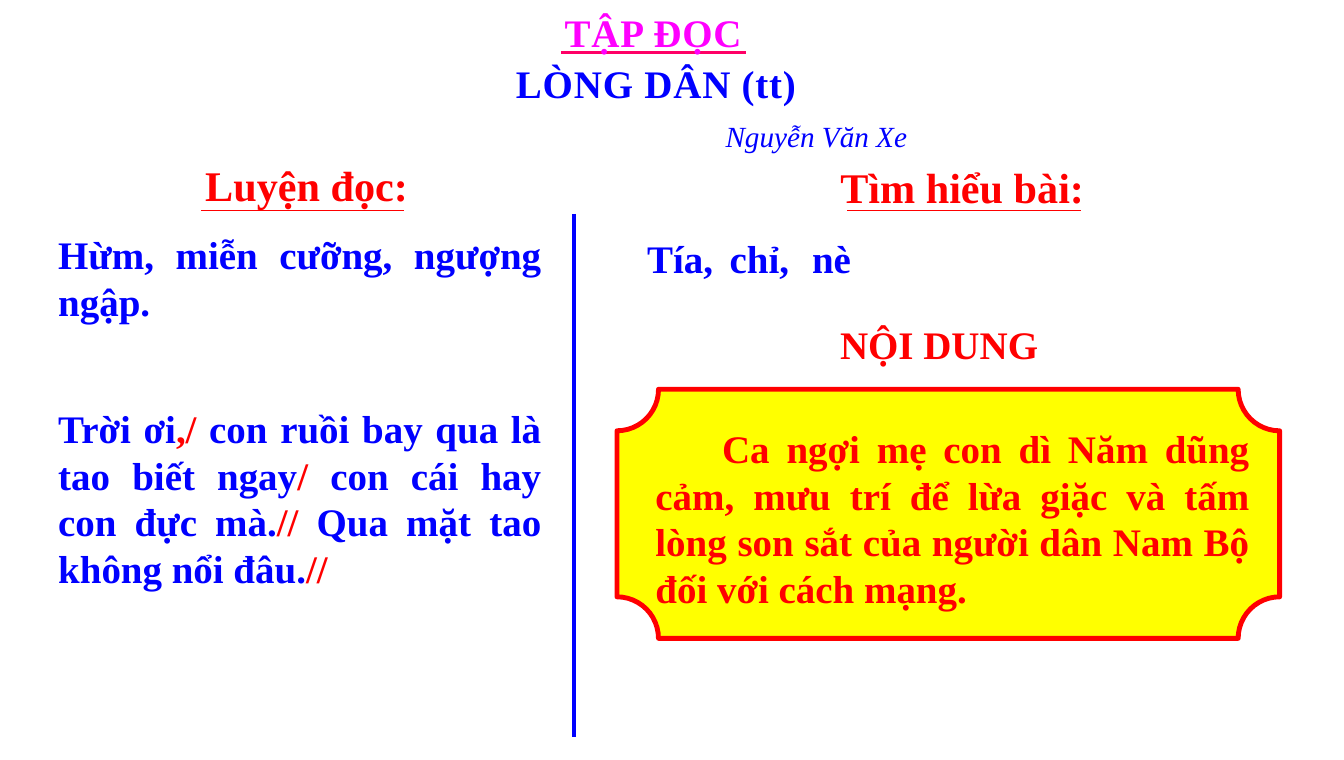
from pptx import Presentation
from pptx.dml.color import RGBColor
from pptx.enum.shapes import MSO_CONNECTOR as Connector, MSO_SHAPE as Shape
from pptx.enum.text import MSO_ANCHOR as Anchor, MSO_AUTO_SIZE as AutoSize, PP_ALIGN as Align
from pptx.oxml.ns import qn
from pptx.util import Inches, Pt

COLUMNS, ROWS = 115, 65
WIDTH, HEIGHT = Inches(11.5), Inches(6.5)
FONT = "Times New Roman"
COLORS = {
    "blue": "0000FF",
    "red": "FF0000",
    "magenta": "FF00FF",
    "pink": "FF0066",
    "yellow": "FFFF00",
}


def color(name):
    return RGBColor.from_string(COLORS[name])


def grid(column, row):
    return round(WIDTH * column / COLUMNS), round(HEIGHT * row / ROWS)


def box(column, row, columns, rows):
    return *grid(column, row), *grid(columns, rows)


def write(shape, runs, size=24, align=Align.CENTER, bold=True, italic=False,
          wrap=True, spacing=0, indent=0):
    """Fill a shape with one paragraph made of (text, color name) runs."""
    frame = shape.text_frame
    frame.word_wrap = wrap
    frame.auto_size = AutoSize.NONE
    frame.vertical_anchor = Anchor.TOP
    paragraph = frame.paragraphs[0]
    paragraph.alignment = align
    if indent:
        paragraph._p.get_or_add_pPr().set("indent", str(Inches(indent)))
    for text, color_name in runs:
        run = paragraph.add_run()
        run.text = text
        font = run.font
        font.name, font.size = FONT, Pt(size)
        font.bold, font.italic = bold, italic
        font.color.rgb = color(color_name)
        if spacing:
            run._r.get_or_add_rPr().set("spc", str(round(spacing * 100)))


def add_text(slide, place, runs, **style):
    write(slide.shapes.add_textbox(*box(*place)), runs, **style)


def add_line(slide, start, end, color_name, width):
    line = slide.shapes.add_connector(Connector.STRAIGHT, *grid(*start), *grid(*end))
    line.line.color.rgb = color(color_name)
    line.line.width = Pt(width)
    properties = line._element.spPr
    properties.append(properties.makeelement(qn("a:effectLst"), {}))


def add_heading(slide, place, text, underline_start, underline_end):
    add_text(slide, place, [(text, "red")], size=26)
    add_line(slide, (underline_start, 18), (underline_end, 18), "red", 1)


def add_lesson_title(slide):
    title = slide.shapes.title
    title.left, title.top, title.width, title.height = box(43, 4.6, 26.3, 5)
    write(title, [("LÒNG DÂN (tt)", "blue")], wrap=False, spacing=0.5)
    add_text(slide, (59.9, 9.6, 19.9, 4), [("Nguyễn Văn Xe", "blue")],
             size=18, bold=False, italic=True)
    add_line(slide, (48, 4.5), (63.8, 4.5), "pink", 2.25)
    add_text(slide, (47.2, 0.2, 17.4, 5), [("TẬP ĐỌC", "magenta")],
             wrap=False, spacing=0.5)


def add_reading_column(slide):
    add_heading(slide, (15.8, 13.1, 20.9, 5.4), "Luyện đọc:", 17.2, 34.6)
    add_text(slide, (4, 19.2, 43.3, 9.1),
             [("Hừm, miễn cưỡng, ngượng ngập.", "blue")], align=Align.JUSTIFY)
    passage = [
        ("Trời ơi", "blue"), (",/", "red"),
        (" con ruồi bay qua là tao biết ngay", "blue"), ("/", "red"),
        (" con cái hay con đực mà.", "blue"), ("//", "red"),
        (" Qua mặt tao không nổi đâu.", "blue"), ("//", "red"),
    ]
    add_text(slide, (4, 34.1, 43.3, 17.2), passage, align=Align.JUSTIFY)


def add_meaning_column(slide):
    add_heading(slide, (69.4, 13.3, 25.9, 5.4), "Tìm hiểu bài:", 72.5, 92.5)
    for index, word in enumerate(["Tía,", "chỉ,", "nè"]):
        add_text(slide, (54.4 + 7.05 * index, 19.6, 8.6, 5), [(word, "blue")],
                 align=Align.JUSTIFY)
    add_text(slide, (69.6, 26.9, 21.5, 5), [("NỘI DUNG", "red")])

    plaque = slide.shapes.add_shape(Shape.PLAQUE, *box(52.8, 33.3, 56.7, 21.3))
    plaque.shadow.inherit = False
    plaque.fill.solid()
    plaque.fill.fore_color.rgb = color("yellow")
    plaque.line.color.rgb = color("red")
    plaque.line.width = Pt(3)
    summary = ("Ca ngợi mẹ con dì Năm dũng cảm, mưu trí để lừa giặc và tấm "
               "lòng son sắt của người dân Nam Bộ đối với cách mạng.")
    add_text(slide, (55.1, 35.8, 52.8, 17.2), [(summary, "red")],
             align=Align.JUSTIFY, indent=0.57)


def main():
    presentation = Presentation()
    presentation.slide_width, presentation.slide_height = WIDTH, HEIGHT
    slide = presentation.slides.add_slide(presentation.slide_layouts[5])
    add_lesson_title(slide)
    add_line(slide, (49.1, 18.3), (49.1, 63), "blue", 2.25)
    add_reading_column(slide)
    add_meaning_column(slide)
    presentation.save("out.pptx")


if __name__ == "__main__":
    main()
